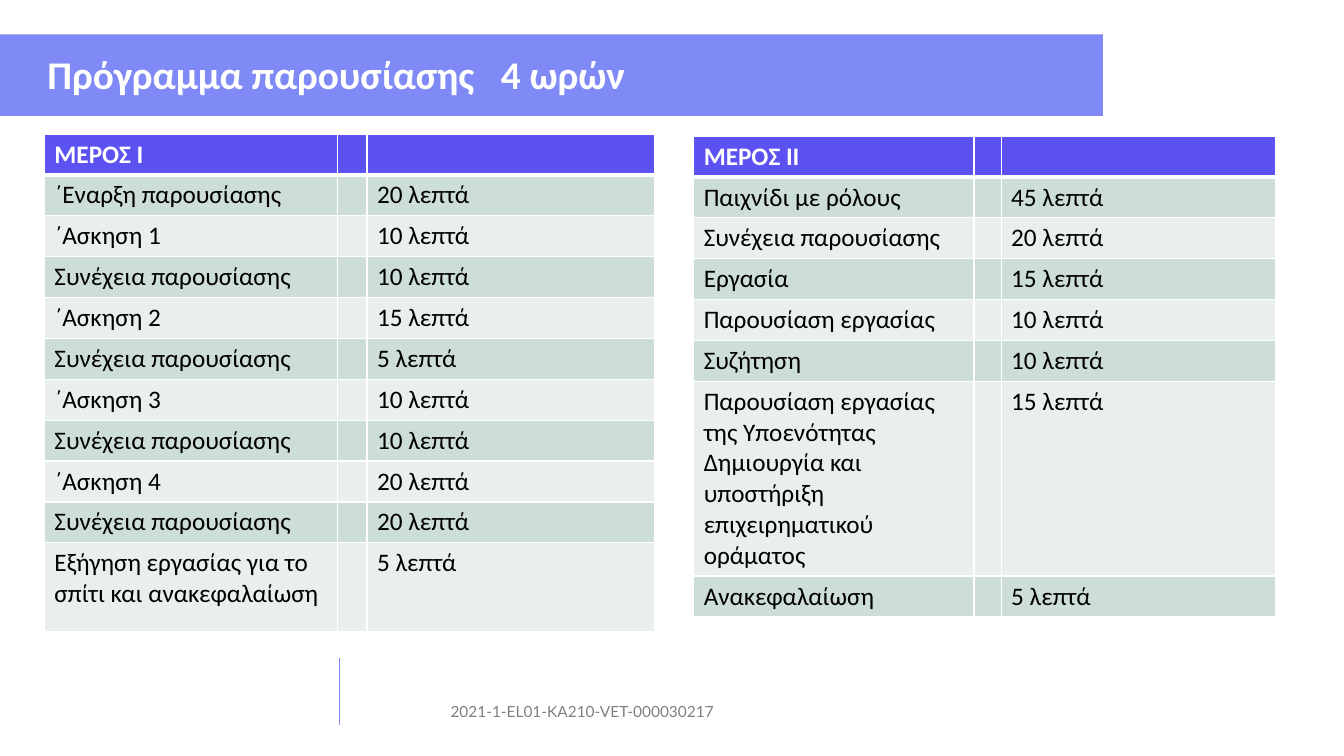
from dataclasses import dataclass

from lxml.etree import SubElement
from pptx import Presentation
from pptx.dml.color import RGBColor
from pptx.enum.shapes import MSO_CONNECTOR as CONN, MSO_SHAPE as SHAPE
from pptx.enum.text import MSO_ANCHOR as ANCHOR, PP_ALIGN as ALIGN
from pptx.oxml.ns import qn
from pptx.util import Inches, Pt


@dataclass(frozen=True)
class Theme:
    """Colours, fonts and type sizes of the slide."""
    band: str = "7F8AF6"
    header: str = "5C51F1"
    rows: tuple = ("CDDED6", "E8EFEC")
    white: str = "FFFFFF"
    black: str = "000000"
    grey: str = "808080"
    body: str = "Calibri"
    foot: str = "Lato"
    title_size: int = 28
    cell_size: int = 18
    foot_size: int = 11


T = Theme()
PART_1 = [
    ("ΜΕΡΟΣ Ι", ""),
    ("΄Εναρξη παρουσίασης", "20 λεπτά"),
    ("΄Ασκηση 1", "10 λεπτά"),
    ("Συνέχεια παρουσίασης", "10 λεπτά"),
    ("΄Ασκηση 2", "15 λεπτά"),
    ("Συνέχεια παρουσίασης", "5 λεπτά"),
    ("΄Ασκηση 3", "10 λεπτά"),
    ("Συνέχεια παρουσίασης", "10 λεπτά"),
    ("΄Ασκηση 4", "20 λεπτά"),
    ("Συνέχεια παρουσίασης", "20 λεπτά"),
    ("Εξήγηση εργασίας για το σπίτι και ανακεφαλαίωση", "5 λεπτά"),
]
PART_2 = [
    ("ΜΕΡΟΣ ΙΙ", ""),
    ("Παιχνίδι με ρόλους", "45 λεπτά"),
    ("Συνέχεια παρουσίασης", "20 λεπτά"),
    ("Εργασία", "15 λεπτά"),
    ("Παρουσίαση εργασίας", "10 λεπτά"),
    ("Συζήτηση", "10 λεπτά"),
    ("Παρουσίαση εργασίας της Υποενότητας Δημιουργία και υποστήριξη "
     "επιχειρηματικού οράματος", "15 λεπτά"),
    ("Ανακεφαλαίωση", "5 λεπτά"),
]


def write(tf, text, color, **fmt):
    """Put one formatted paragraph in a text frame and return it."""
    p = tf.paragraphs[0]
    r = p.add_run()
    r.text = text
    for name, value in fmt.items():
        setattr(r.font, name, value)
    r.font.color.rgb = RGBColor.from_string(color)
    return p


def paint(fill, color):
    """Make a fill solid in the given colour."""
    fill.solid()
    fill.fore_color.rgb = RGBColor.from_string(color)


def add_borders(cell, bottom):
    """Draw white borders round a cell, the bottom one of the given width."""
    pr = cell._tc.get_or_add_tcPr()
    for i, (side, width) in enumerate(
            {"lnL": 1, "lnR": 1, "lnT": 1, "lnB": bottom}.items()):
        ln = SubElement(pr, qn(f"a:{side}"), w=str(Pt(width)))
        SubElement(SubElement(ln, qn("a:solidFill")), qn("a:srgbClr"), val=T.white)
        pr.insert(i, ln)


def add_title(s, text, x, y, w, h):
    """Place the title band and the slide title on it."""
    band = s.shapes.add_shape(SHAPE.RECTANGLE, *map(Inches, (x, y, w, h)))
    band.shadow.inherit = False
    paint(band.fill, T.band)
    band.line.fill.background()
    title = s.shapes.title
    s.shapes.element.append(title.element)
    box = {"left": x + 0.37, "top": y + 0.2, "width": 6.51, "height": 0.45}
    for name, value in box.items():
        setattr(title, name, Inches(value))
    tf = title.text_frame
    tf.word_wrap, tf.vertical_anchor = True, ANCHOR.MIDDLE
    p = write(tf, text, T.white, size=Pt(T.title_size), name=T.body, bold=True)
    p.alignment, p.line_spacing = ALIGN.LEFT, 0.9


def add_schedule(s, items, x, y, cols, tall):
    """Place a schedule table; tall maps a row number to its own height."""
    heights = [tall.get(i, 0.4) for i in range(len(items))]
    box = map(Inches, (x, y, sum(cols), sum(heights)))
    table = s.shapes.add_table(len(items), len(cols), *box).table
    for col, width in zip(table.columns, cols):
        col.width = Inches(width)
    for i, (activity, minutes) in enumerate(items):
        table.rows[i].height = Inches(heights[i])
        head = i == 0
        for cell, text in zip(table.rows[i].cells, (activity, "", minutes)):
            paint(cell.fill, T.header if head else T.rows[(i - 1) % 2])
            add_borders(cell, 3 if head else 1)
            if text:
                write(cell.text_frame, text, T.white if head else T.black,
                      size=Pt(T.cell_size), name=T.body, bold=head)


def add_footer(s, text, x, y, h):
    """Place the footer rule and the project number right of it."""
    rule = s.shapes.add_connector(CONN.STRAIGHT, *map(Inches, (x, y, x, y + h)))
    rule.line.color.rgb = RGBColor.from_string(T.band)
    rule.line.width = Pt(1)
    SubElement(rule.element.spPr, qn("a:effectLst"))
    box = map(Inches, (x + 1, y + 0.39, 3.63, 0.29))
    tf = s.shapes.add_textbox(*box).text_frame
    tf.word_wrap = True
    write(tf, text, T.grey, size=Pt(T.foot_size), name=T.foot)


def main():
    """Build the slide and save it."""
    prs = Presentation()
    prs.slide_width, prs.slide_height = Inches(13.33), Inches(7.5)
    s = prs.slides.add_slide(prs.slide_layouts[5])
    add_footer(s, "2021-1-EL01-KA210-VET-000030217", 3.37, 6.53, 0.66)
    add_title(s, "Πρόγραμμα παρουσίασης   4 ωρών", 0, 0.34, 10.94, 0.81)
    add_schedule(s, PART_1, 0.44, 1.33, (2.91, 0.29, 2.85), {10: 0.88})
    add_schedule(s, PART_2, 6.88, 1.35, (2.78, 0.27, 2.72), {6: 1.92})
    prs.save("out.pptx")


if __name__ == "__main__":
    main()
